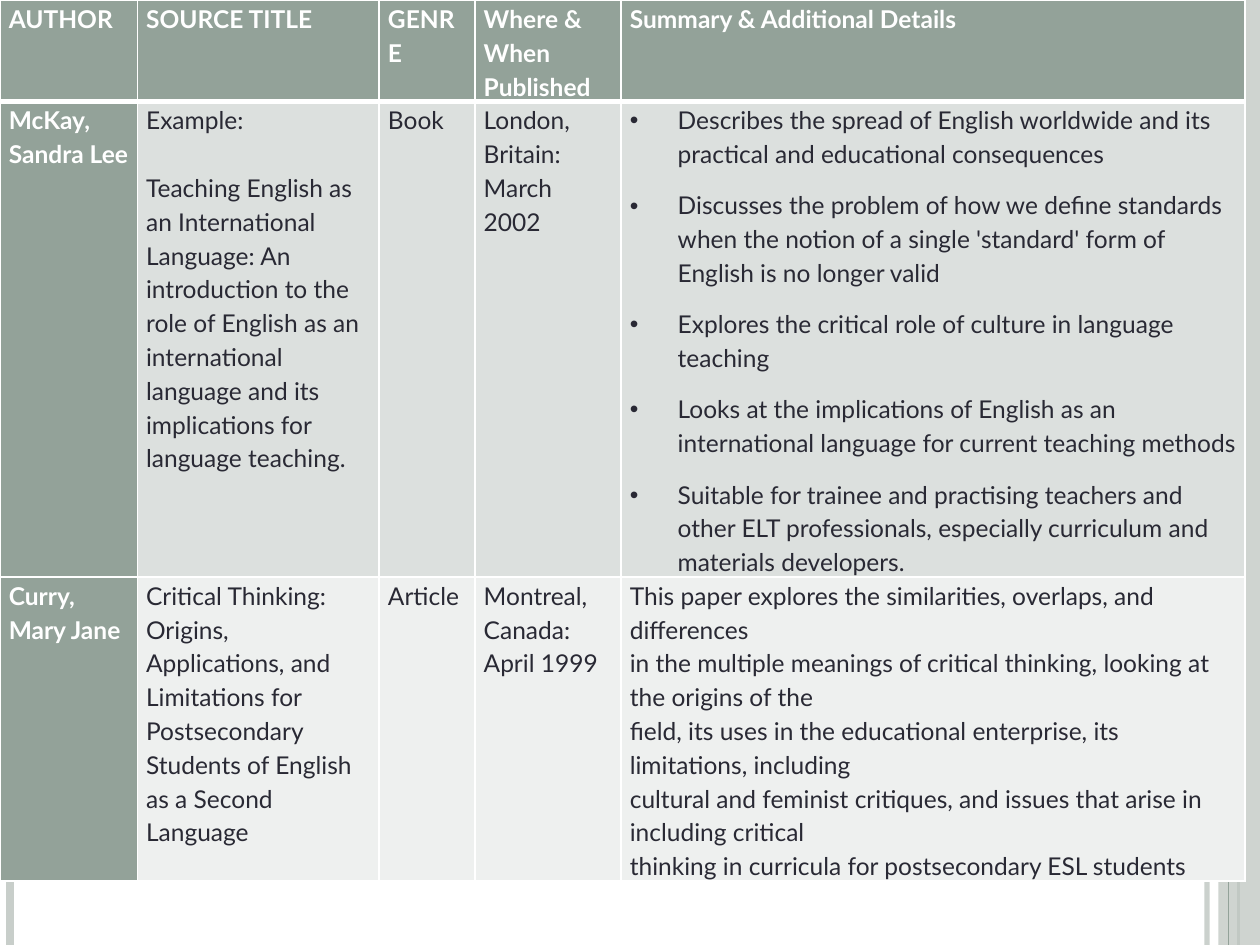
from dataclasses import dataclass

from lxml.etree import SubElement
from pptx import Presentation
from pptx.dml.color import RGBColor
from pptx.enum.shapes import MSO_CONNECTOR, MSO_SHAPE
from pptx.oxml import parse_xml
from pptx.oxml.ns import nsdecls, qn
from pptx.util import Inches, Pt


@dataclass(frozen=True)
class Theme:
    accent: str = "93A299"
    stripe: str = "C8CECA"
    band_dark: str = "DCE0DE"
    band_light: str = "EEF0EF"
    ink: str = "292934"
    white: str = "FFFFFF"
    font: str = "Lato"
    text_size: int = 14
    line_spacing: float = 1.15
    border: int = 1
    header_border: int = 3


class SlideBuilder:
    def __init__(self, page, theme):
        self.page = page
        self.theme = theme

    def set_opacity(self, shape, percent):
        for color in shape._element.xpath(".//a:srgbClr"):
            SubElement(color, qn("a:alpha"), val=str(percent * 1000))

    def vertical_line(self, x, color, width, opacity=100):
        line = self.page.shapes.add_connector(
            MSO_CONNECTOR.STRAIGHT, Inches(x), Inches(0), Inches(x), Inches(7.5))
        line.line.color.rgb = RGBColor.from_string(color)
        line.line.width = Pt(width)
        SubElement(line._element.spPr, qn("a:effectLst"))
        if opacity < 100:
            self.set_opacity(line, opacity)

    def side_band(self, left, width, color, opacity):
        band = self.page.shapes.add_shape(
            MSO_SHAPE.RECTANGLE, Inches(left), Inches(0), Inches(width), Inches(7.5))
        band.shadow.inherit = False
        band.fill.solid()
        band.fill.fore_color.rgb = RGBColor.from_string(color)
        band.line.fill.background()
        self.set_opacity(band, opacity)

    def border_cell(self, cell, widths):
        properties = cell._tc.get_or_add_tcPr()
        for position, (side, width) in enumerate(widths.items()):
            properties.insert(position, parse_xml(
                f'<a:ln{side} {nsdecls("a")} w="{Pt(width)}"><a:solidFill>'
                f'<a:srgbClr val="{self.theme.white}"/></a:solidFill></a:ln{side}>'))

    def add_bullet(self, para):
        properties = para._p.get_or_add_pPr()
        properties.set("marL", str(Inches(0.38)))
        properties.set("indent", str(-Inches(0.38)))
        para.space_after = Pt(10)
        SubElement(properties, qn("a:buFont"), typeface="Arial")
        SubElement(properties, qn("a:buChar"), char="•")

    def fill_cell(self, cell, lines, fill, heading, bulleted):
        cell.margin_left = Inches(0.07)
        cell.margin_right = Inches(0.06)
        cell.margin_top = cell.margin_bottom = Inches(0)
        cell.fill.solid()
        cell.fill.fore_color.rgb = RGBColor.from_string(fill)
        frame = cell.text_frame
        frame.text = "\n".join(lines)
        for para in frame.paragraphs:
            para.line_spacing = self.theme.line_spacing
            if bulleted:
                self.add_bullet(para)
            para.font.name = self.theme.font
            para.font.size = Pt(self.theme.text_size)
            para.font.bold = heading
            para.font.color.rgb = RGBColor.from_string(
                self.theme.white if heading else self.theme.ink)

    def source_table(self, rows, column_widths, row_heights, bulleted_cell):
        theme = self.theme
        frame = self.page.shapes.add_table(
            len(rows), len(column_widths), Inches(0), Inches(0), Inches(9.88), Inches(6.68))
        table = frame.table
        table.first_row = table.horz_banding = False
        for column, width in zip(table.columns, column_widths):
            column.width = Inches(width)
        for row, height in zip(table.rows, row_heights):
            row.height = Inches(height)
        frame.height = Inches(6.68)
        bands = (theme.accent, theme.band_dark, theme.band_light)
        for r, (row, band) in enumerate(zip(rows, bands)):
            for c, lines in enumerate(row):
                cell = table.cell(r, c)
                heading = r == 0 or c == 0
                self.fill_cell(cell, lines, theme.accent if heading else band,
                               heading, (r, c) == bulleted_cell)
                self.border_cell(cell, {
                    "L": theme.border,
                    "R": theme.border,
                    "T": theme.header_border if r == 1 else theme.border,
                    "B": theme.header_border if r == 0 else theme.border,
                })
        return table


ROWS = [
    [["AUTHOR"], ["SOURCE TITLE"], ["GENRE"], ["Where & When Published"],
     ["Summary & Additional Details"]],
    [["McKay, Sandra Lee"],
     ["Example:",
      "Teaching English as an International Language: An introduction to the role of "
      "English as an international language and its implications for language teaching."],
     ["Book"],
     ["London, Britain: March 2002"],
     ["Describes the spread of English worldwide and its practical and educational consequences",
      "Discusses the problem of how we define standards when the notion of a single "
      "'standard' form of English is no longer valid",
      "Explores the critical role of culture in language teaching",
      "Looks at the implications of English as an international language for current "
      "teaching methods",
      "Suitable for trainee and practising teachers and other ELT professionals, "
      "especially curriculum and materials developers."]],
    [["Curry, Mary Jane"],
     ["Critical Thinking: Origins, Applications, and Limitations for Postsecondary "
      "Students of English as a Second Language"],
     ["Article"],
     ["Montreal, Canada: April 1999"],
     ["This paper explores the similarities, overlaps, and differences",
      "in the multiple meanings of critical thinking, looking at the origins of the",
      "field, its uses in the educational enterprise, its limitations, including",
      "cultural and feminist critiques, and issues that arise in including critical",
      "thinking in curricula for postsecondary ESL students"]],
]


def main():
    deck = Presentation()
    deck.slide_width = Inches(10)
    deck.slide_height = Inches(7.5)
    theme = Theme()
    builder = SlideBuilder(deck.slides.add_slide(deck.slide_layouts[6]), theme)

    builder.vertical_line(9.58, theme.stripe, 3, opacity=93)
    builder.vertical_line(0.08, theme.stripe, 4.5)
    builder.vertical_line(9.83, theme.accent, 1.5)
    builder.side_band(9.67, 0.33, theme.stripe, opacity=87)
    builder.vertical_line(9.75, theme.accent, 0.75)

    table = builder.source_table(
        ROWS, (1.09, 1.92, 0.76, 1.16, 4.95), (0.71, 2.59, 1.04), bulleted_cell=(1, 4))
    example = table.cell(1, 1).text_frame.paragraphs[0]
    example.space_after = Pt(theme.text_size * 1.2 * theme.line_spacing)

    deck.save("out.pptx")


if __name__ == "__main__":
    main()
